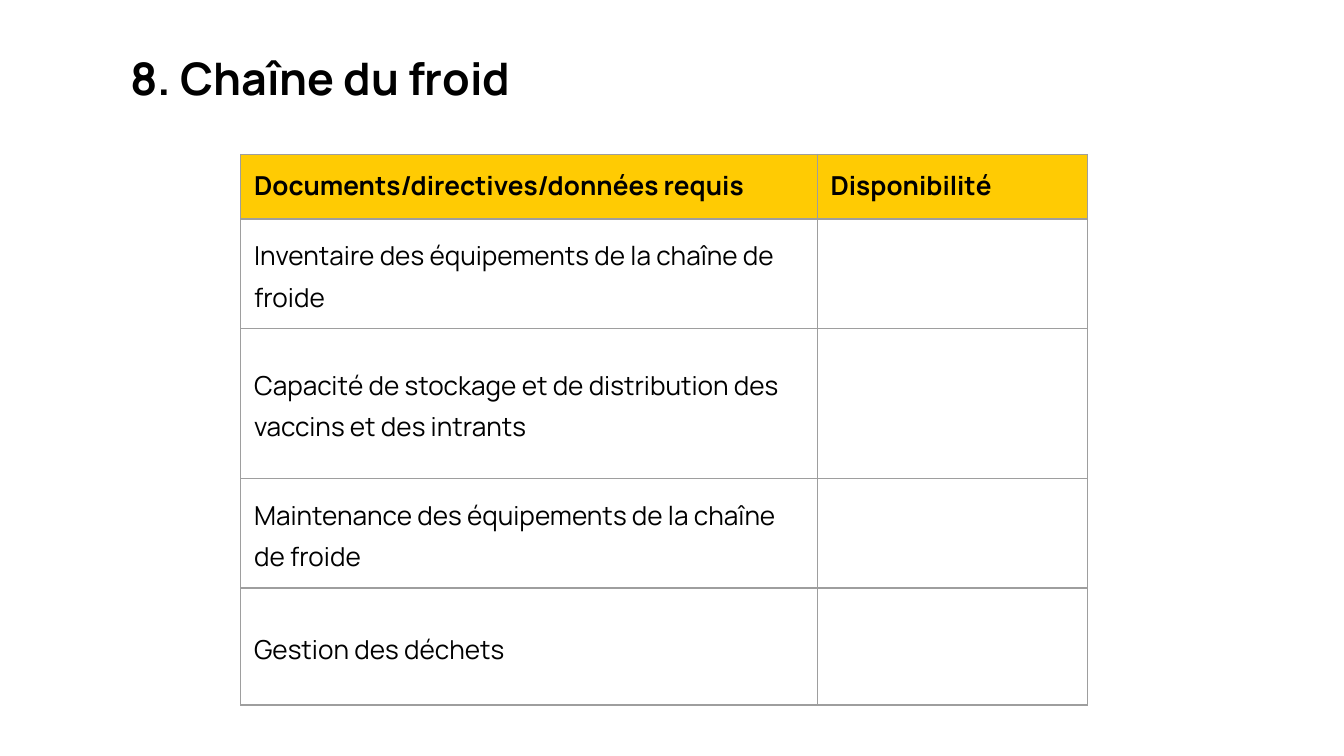
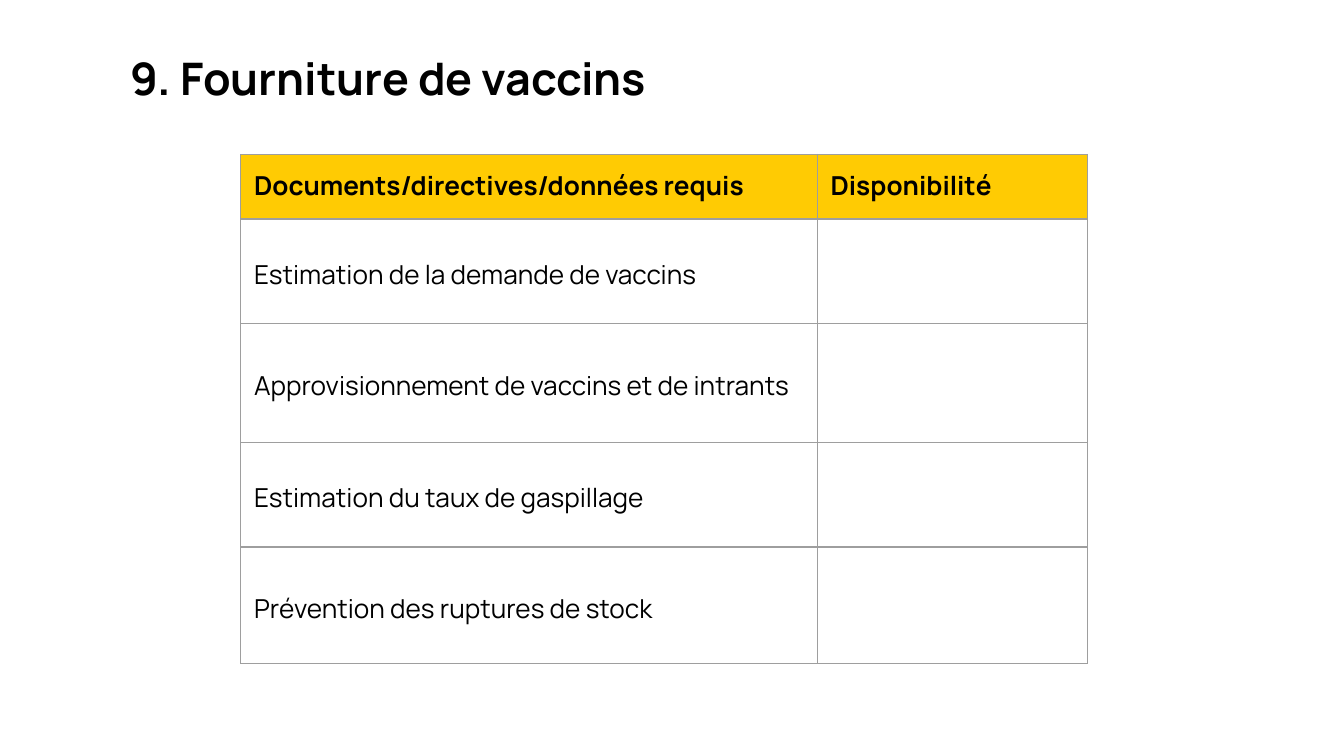
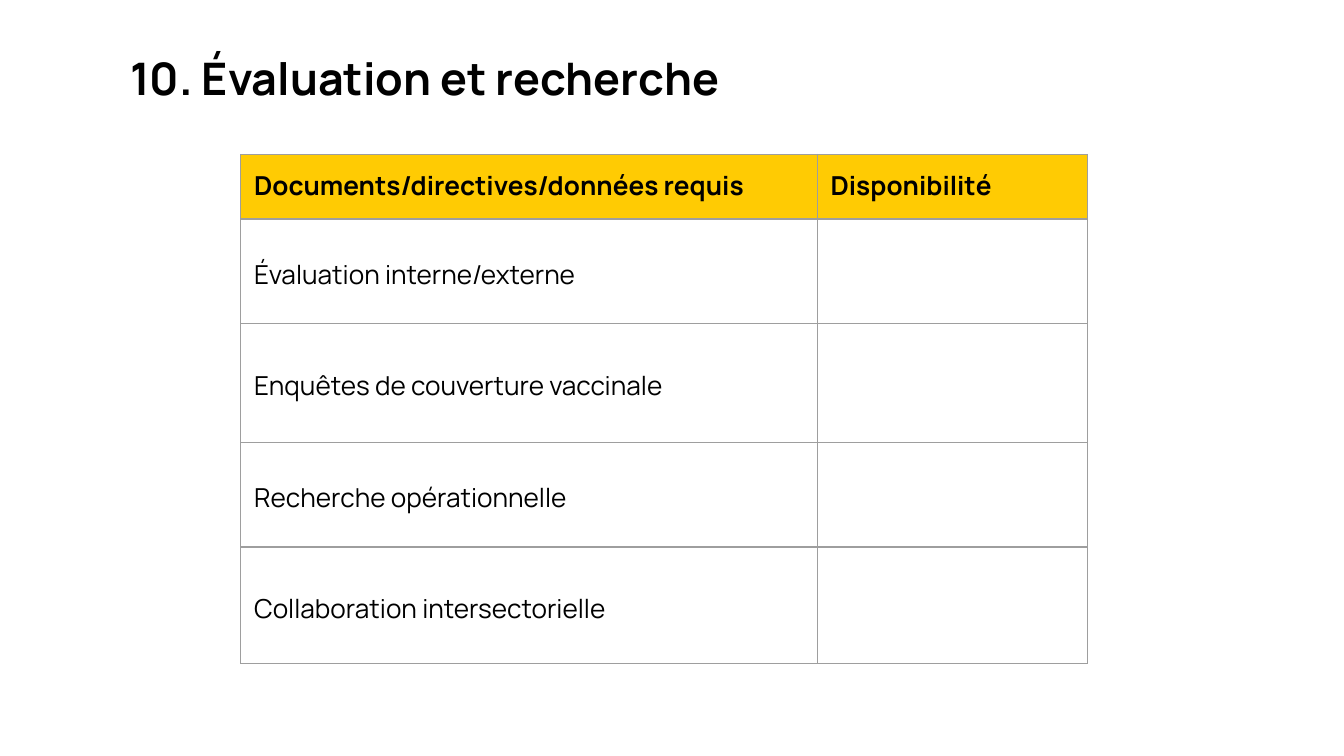
from lxml import etree
from pptx import Presentation
from pptx.dml.color import RGBColor
from pptx.enum.text import MSO_ANCHOR, MSO_AUTO_SIZE, PP_ALIGN
from pptx.oxml.ns import qn
from pptx.util import Inches, Pt

FONT = "Manrope"
BLACK = RGBColor(0x00, 0x00, 0x00)
WHITE = RGBColor(0xFF, 0xFF, 0xFF)
YELLOW = RGBColor(0xFF, 0xCB, 0x03)
GREY = RGBColor(0x9E, 0x9E, 0x9E)

SLIDE_WIDTH = Inches(10)
SLIDE_HEIGHT = SLIDE_WIDTH * 9 // 16

INSET = Inches(0.1)
TITLE_BOX = (0.87, 0.28, 9.13, 0.59)
TABLE_ORIGIN = (1.79, 1.15)
COLUMN_WIDTHS = (4.29, 2.01)
HEADINGS = ("Documents/directives/données requis", "Disponibilité")
HEADING_HEIGHT = 0.48

# Each section: title, then its required documents with their row heights
SECTIONS = [
    ("8. Chaîne du froid", [
        ("Inventaire des équipements de la chaîne de froide", 0.78),
        ("Capacité de stockage et de distribution des vaccins et des intrants", 1.12),
        ("Maintenance des équipements de la chaîne de froide", 0.78),
        ("Gestion des déchets", 0.87),
    ]),
    ("9. Fourniture de vaccins", [
        ("Estimation de la demande de vaccins", 0.78),
        ("Approvisionnement de vaccins et de intrants", 0.88),
        ("Estimation du taux de gaspillage", 0.78),
        ("Prévention des ruptures de stock", 0.87),
    ]),
    ("10. Évaluation et recherche", [
        ("Évaluation interne/externe", 0.78),
        ("Enquêtes de couverture vaccinale", 0.88),
        ("Recherche opérationnelle", 0.78),
        ("Collaboration intersectorielle", 0.87),
    ]),
]


def set_insets(holder):
    holder.margin_left = holder.margin_right = INSET
    holder.margin_top = holder.margin_bottom = INSET


def style_text(paragraph, size, bold):
    paragraph.alignment = PP_ALIGN.LEFT
    for run in paragraph.runs:
        run.font.name = FONT
        run.font.size = Pt(size)
        run.font.bold = bold
        run.font.color.rgb = BLACK


def set_borders(cell):
    properties = cell._tc.get_or_add_tcPr()
    for side in ("a:lnL", "a:lnR", "a:lnT", "a:lnB"):
        border = etree.SubElement(properties, qn(side), w=str(Pt(0.75)))
        fill = etree.SubElement(border, qn("a:solidFill"))
        etree.SubElement(fill, qn("a:srgbClr"), val=str(GREY))


def add_title(slide, text, box):
    title = slide.shapes.title
    title.left, title.top, title.width, title.height = map(Inches, box)
    frame = title.text_frame
    frame.text = text
    frame.word_wrap = True
    frame.auto_size = MSO_AUTO_SIZE.NONE
    frame.vertical_anchor = MSO_ANCHOR.TOP
    set_insets(frame)
    style_text(frame.paragraphs[0], 24, True)


def fill_cell(cell, text, is_heading):
    set_insets(cell)
    set_borders(cell)
    paragraph = cell.text_frame.paragraphs[0]
    paragraph.text = text
    style_text(paragraph, 14, is_heading)
    if is_heading:
        cell.fill.solid()
        cell.fill.fore_color.rgb = YELLOW
    else:
        cell.fill.background()
        cell.vertical_anchor = MSO_ANCHOR.MIDDLE
        paragraph.line_spacing = 1.15


def add_checklist(slide, documents, origin):
    """Add the table of required documents with an empty availability column."""
    heights = [HEADING_HEIGHT] + [height for _, height in documents]
    rows = [HEADINGS] + [(name, "") for name, _ in documents]
    size = (sum(COLUMN_WIDTHS), sum(heights))
    table = slide.shapes.add_table(
        len(rows), len(HEADINGS), *map(Inches, origin + size)).table
    table.first_row = table.horz_banding = False
    for column, width in zip(table.columns, COLUMN_WIDTHS):
        column.width = Inches(width)
    for index, (row, height, texts) in enumerate(zip(table.rows, heights, rows)):
        row.height = Inches(height)
        for cell, text in zip(row.cells, texts):
            fill_cell(cell, text, index == 0)


def add_section_slide(deck, title, documents):
    slide = deck.slides.add_slide(deck.slide_layouts.get_by_name("Title Only"))
    add_title(slide, title, TITLE_BOX)
    add_checklist(slide, documents, TABLE_ORIGIN)


def main():
    deck = Presentation()
    deck.slide_width, deck.slide_height = SLIDE_WIDTH, SLIDE_HEIGHT
    background = deck.slide_master.background.fill
    background.solid()
    background.fore_color.rgb = WHITE
    for title, documents in SECTIONS:
        add_section_slide(deck, title, documents)
    deck.save("out.pptx")


if __name__ == "__main__":
    main()
